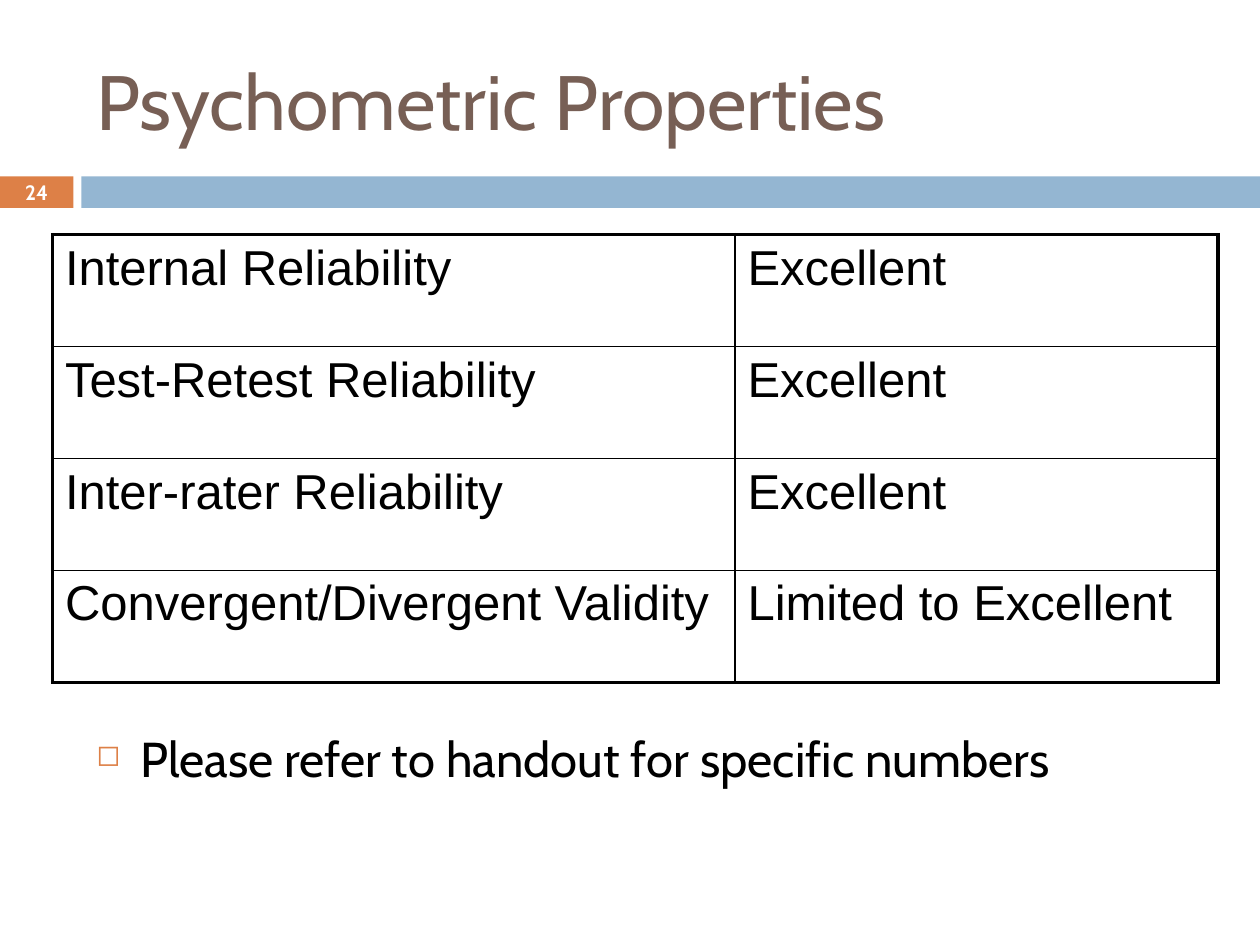
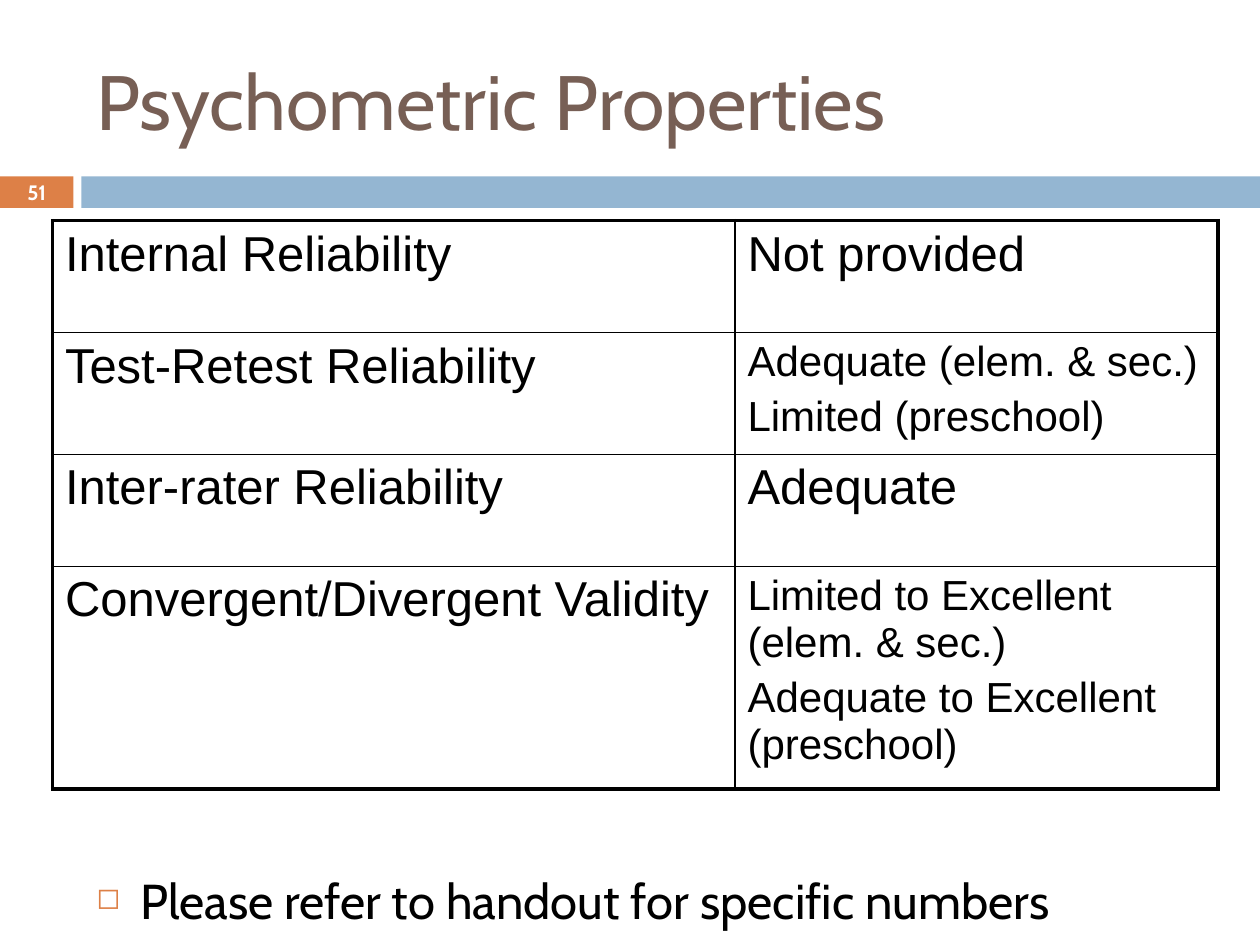
from lxml.etree import SubElement
from pptx import Presentation
from pptx.dml.color import RGBColor
from pptx.enum.shapes import MSO_SHAPE as Shape
from pptx.enum.text import MSO_ANCHOR as Anchor, PP_ALIGN as Align
from pptx.oxml.ns import qn
from pptx.util import Pt

ORANGE = RGBColor(0xDD, 0x80, 0x47)
BLUE = RGBColor(0x94, 0xB6, 0xD2)
BROWN = RGBColor(0x77, 0x5F, 0x55)
BLACK = RGBColor(0, 0, 0)
WHITE = RGBColor(0xFF, 0xFF, 0xFF)

HEADING_FONT = "Cabin"
TABLE_FONT = "Arial"
TITLE = "Psychometric Properties"
NOTE = "Please refer to handout for specific numbers"
PROPERTIES = [
    "Internal Reliability",
    "Test-Retest Reliability",
    "Inter-rater Reliability",
    "Convergent/Divergent Validity",
]

SLIDE_WIDTH, SLIDE_HEIGHT = 720, 540
BAND_TOP, BAND_HEIGHT = 100.8, 18
NUMBER_WIDTH, BAND_LEFT = 42, 46.5
CONTENT_LEFT, CONTENT_WIDTH = 48, 642
TABLE_LEFT = 30
COLUMN_WIDTHS = (390, 276)
OUTER_LINE, INNER_LINE = 2.25, 1
BULLET_INDENT = 25.2


def add_run(paragraph, text, size, color, font=HEADING_FONT, bold=False):
    run = paragraph.add_run()
    run.text = text
    run.font.name = font
    run.font.size = Pt(size)
    run.font.bold = bold
    run.font.color.rgb = color


def add_text_box(slide, left, top, width, height, anchor=Anchor.TOP):
    frame = slide.shapes.add_textbox(Pt(left), Pt(top), Pt(width), Pt(height)).text_frame
    frame.word_wrap = True
    frame.vertical_anchor = anchor
    return frame


def add_band(slide, left, width, color):
    band = slide.shapes.add_shape(
        Shape.RECTANGLE, Pt(left), Pt(BAND_TOP), Pt(width), Pt(BAND_HEIGHT))
    band.shadow.inherit = False
    band.fill.solid()
    band.fill.fore_color.rgb = color
    band.line.fill.background()
    return band


def add_header(slide, number):
    number_band = add_band(slide, 0, NUMBER_WIDTH, ORANGE)
    add_band(slide, BAND_LEFT, SLIDE_WIDTH - BAND_LEFT, BLUE)

    frame = number_band.text_frame
    frame.margin_top = frame.margin_bottom = 0
    frame.vertical_anchor = Anchor.MIDDLE
    paragraph = frame.paragraphs[0]
    paragraph.alignment = Align.CENTER
    add_run(paragraph, str(number), 11.9, WHITE, bold=True)

    title = add_text_box(slide, CONTENT_LEFT, 18, CONTENT_WIDTH, 78, Anchor.MIDDLE)
    add_run(title.paragraphs[0], TITLE, 44, BROWN)


def add_bullet(slide, top, text):
    paragraph = add_text_box(slide, CONTENT_LEFT, top, CONTENT_WIDTH, 42).paragraphs[0]
    properties = paragraph._p.get_or_add_pPr()
    properties.set("marL", str(Pt(BULLET_INDENT)))
    properties.set("indent", str(-Pt(BULLET_INDENT)))
    bullet_color = SubElement(properties, qn("a:buClr"))
    SubElement(bullet_color, qn("a:srgbClr"), val=str(ORANGE))
    SubElement(properties, qn("a:buSzPct"), val="60000")
    SubElement(properties, qn("a:buChar"), char="◻")
    add_run(paragraph, text, 28, BLACK)


def set_borders(cell, widths):
    properties = cell._tc.get_or_add_tcPr()
    for position, (side, width) in enumerate(widths.items()):
        line = SubElement(properties, qn(f"a:ln{side}"), w=str(Pt(width)))
        fill = SubElement(line, qn("a:solidFill"))
        SubElement(fill, qn("a:srgbClr"), val=str(BLACK))
        properties.insert(position, line)


def fill_cell(cell, lines):
    size = 28 if len(lines) == 1 else 24
    cell.fill.background()
    frame = cell.text_frame
    for index, text in enumerate(lines):
        paragraph = frame.add_paragraph() if index else frame.paragraphs[0]
        if index:
            paragraph.space_before = Pt(size * 0.2)
        add_run(paragraph, text, size, BLACK, TABLE_FONT)


def add_ratings_table(slide, top, row_heights, ratings):
    table = slide.shapes.add_table(
        len(PROPERTIES), len(COLUMN_WIDTHS), Pt(TABLE_LEFT), Pt(top),
        Pt(sum(COLUMN_WIDTHS)), Pt(sum(row_heights))).table
    table.first_row = table.horz_banding = False
    for column, width in zip(table.columns, COLUMN_WIDTHS):
        column.width = Pt(width)
    last_row, last_column = len(PROPERTIES) - 1, len(COLUMN_WIDTHS) - 1
    for row, (name, rating) in enumerate(zip(PROPERTIES, ratings)):
        table.rows[row].height = Pt(row_heights[row])
        for column, lines in enumerate(([name], rating)):
            cell = table.cell(row, column)
            fill_cell(cell, lines)
            outer_sides = {"L": column == 0, "R": column == last_column,
                           "T": row == 0, "B": row == last_row}
            set_borders(cell, {side: OUTER_LINE if outer else INNER_LINE
                               for side, outer in outer_sides.items()})


def add_properties_slide(presentation, number, note_top, table_top, row_heights, ratings):
    slide = presentation.slides.add_slide(presentation.slide_layouts[6])
    add_header(slide, number)
    add_bullet(slide, note_top, NOTE)
    add_ratings_table(slide, table_top, row_heights, ratings)


def main():
    presentation = Presentation()
    presentation.slide_width = Pt(SLIDE_WIDTH)
    presentation.slide_height = Pt(SLIDE_HEIGHT)
    add_properties_slide(
        presentation, 24, 412.5, 134, [64] * 4,
        [["Excellent"], ["Excellent"], ["Excellent"], ["Limited to Excellent"]])
    add_properties_slide(
        presentation, 51, 494, 126, [64, 65.5, 64, 119],
        [["Not provided"],
         ["Adequate (elem. & sec.)", "Limited (preschool)"],
         ["Adequate"],
         ["Limited to Excellent (elem. & sec.)", "Adequate to Excellent (preschool)"]])
    presentation.save("out.pptx")


if __name__ == "__main__":
    main()
